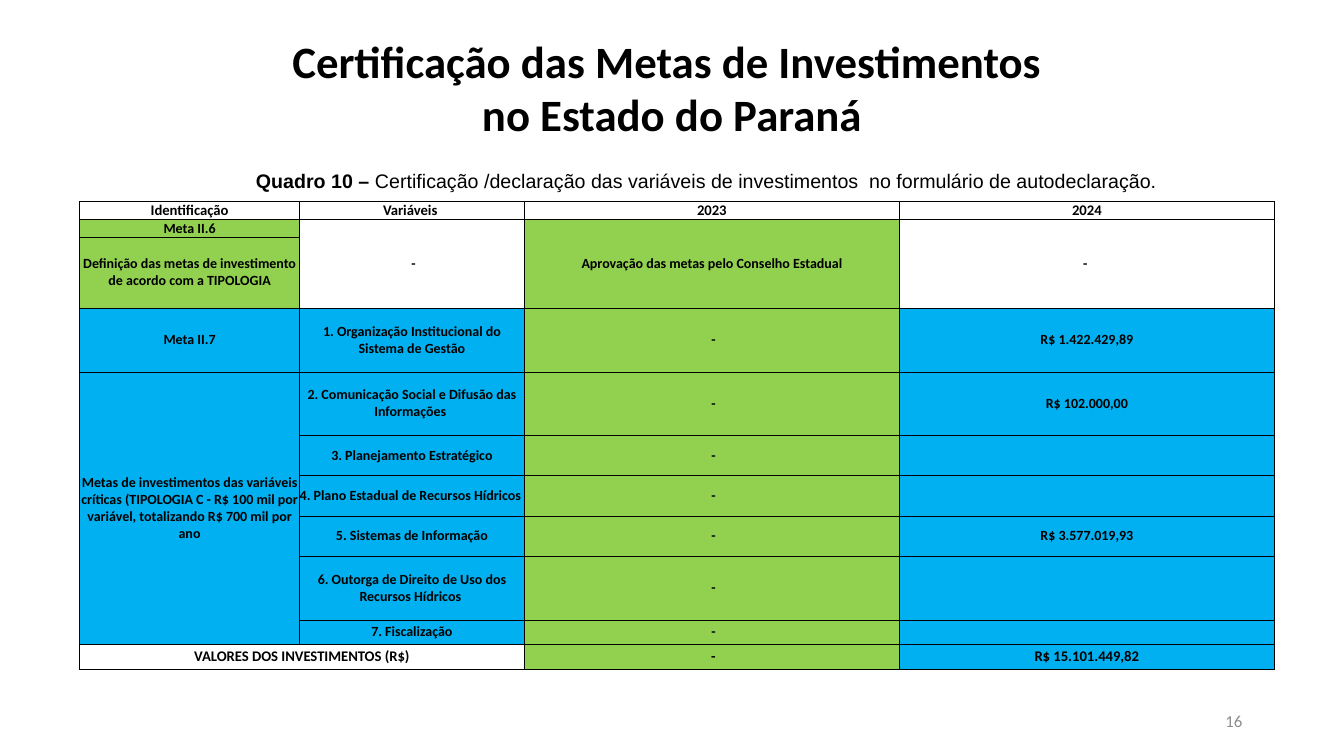
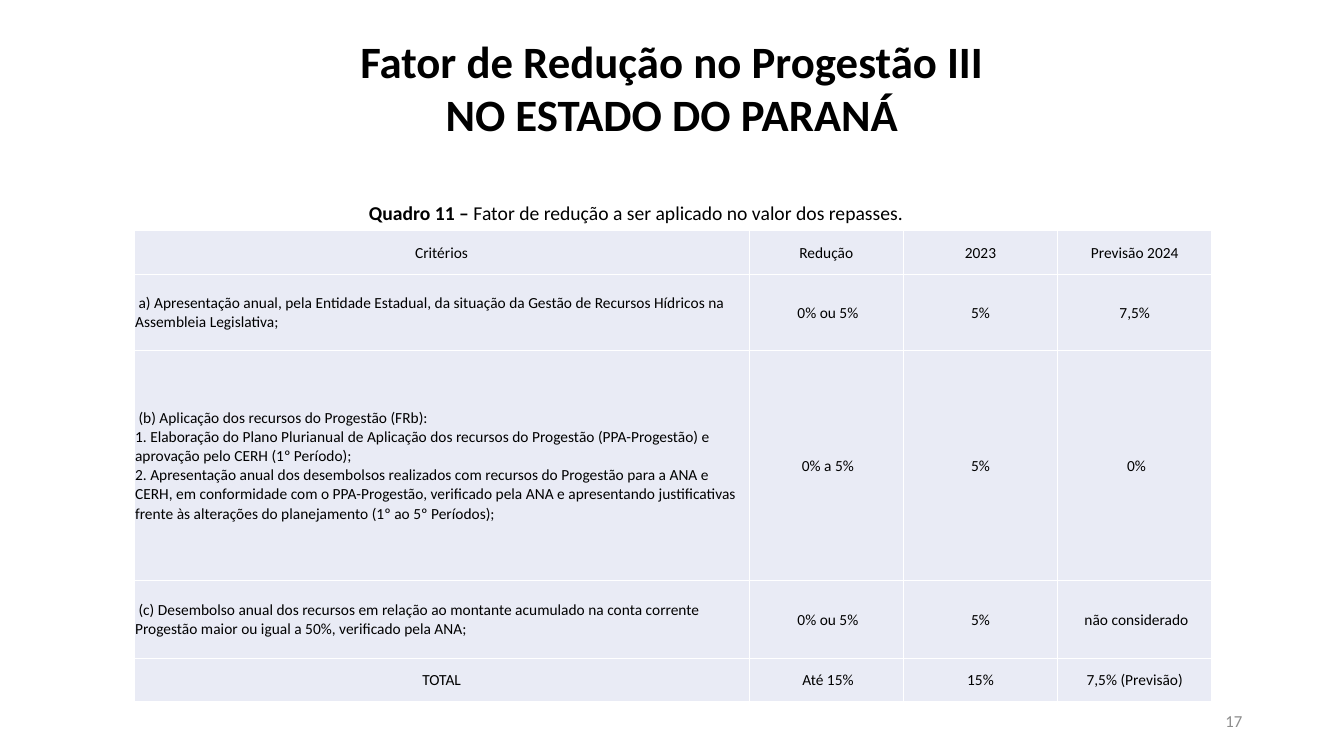
from lxml.etree import SubElement
from pptx import Presentation
from pptx.dml.color import RGBColor
from pptx.enum.text import MSO_ANCHOR as Anchor, MSO_AUTO_SIZE as AutoSize, PP_ALIGN as Align
from pptx.oxml.ns import qn
from pptx.util import Emu, Pt

EMU_PER_PX = 9144
WIDTH, HEIGHT = 1333, 750
TITLE_ONLY = 5
BLACK, WHITE, GRAY = "000000", "FFFFFF", "8C8C8C"
GREEN, BLUE, PALE = "92D050", "00B0F0", "E9EBF5"
SANS, BODY = "Arial", "Calibri"


def px(length):
    return Emu(length * EMU_PER_PX)


def color(value):
    return RGBColor.from_string(value)


class Report:
    """Holds the deck style and the slide being built."""

    def __init__(self):
        self.deck = Presentation()
        self.deck.slide_width, self.deck.slide_height = px(WIDTH), px(HEIGHT)
        self.page = None

    def style(self, para, size, align, font=BODY, ink=BLACK, bold=False):
        para.alignment = align
        for span in para.runs:
            span.font.name, span.font.size, span.font.bold = font, Pt(size), bold
            span.font.color.rgb = color(ink)

    def start(self, title, number):
        self.page = self.deck.slides.add_slide(self.deck.slide_layouts[TITLE_ONLY])
        box = self.page.shapes.title
        box.left, box.top, box.width, box.height = px(0), px(28), px(WIDTH), px(118)
        frame = box.text_frame
        frame.text = title
        frame.auto_size, frame.vertical_anchor = AutoSize.NONE, Anchor.TOP
        for para in frame.paragraphs:
            self.style(para, 32, Align.CENTER, bold=True)
        footer = self.text_box(942, 695, 300, 40)
        footer.vertical_anchor = Anchor.MIDDLE
        footer.text = str(number)
        self.style(footer.paragraphs[0], 12, Align.RIGHT, ink=GRAY)

    def text_box(self, left, top, width, height):
        box = self.page.shapes.add_textbox(px(left), px(top), px(width), px(height))
        box.text_frame.word_wrap = True
        return box.text_frame

    def caption(self, left, top, width, label, wording, font):
        para = self.text_box(left, top, width, 34).paragraphs[0]
        para.text = label
        para.add_run().text = wording
        self.style(para, 14, Align.JUSTIFY, font)
        para.runs[0].font.bold = True

    def table(self, left, top, columns, heights, rows, border, weight):
        holder = self.page.shapes.add_table(
            len(rows), len(columns), px(left), px(top), px(sum(columns)), px(sum(heights)))
        table = holder.table
        table.first_row = table.horz_banding = False
        for column, width in zip(table.columns, columns):
            column.width = px(width)
        for row, height, texts in zip(table.rows, heights, rows):
            row.height = px(height)
            for cell, text in zip(row.cells, texts):
                cell.text = text
                self.outline(cell, border, weight)
        return table

    def outline(self, cell, border, weight):
        properties = cell._tc.get_or_add_tcPr()
        for side in ("lnL", "lnR", "lnT", "lnB"):
            line = SubElement(properties, qn(f"a:{side}"), w=str(Pt(weight)))
            SubElement(SubElement(line, qn("a:solidFill")), qn("a:srgbClr"), val=border)

    def format_cell(self, cell, fill, size, align=Align.CENTER, bold=False, inset=0):
        cell.vertical_anchor = Anchor.MIDDLE
        cell.margin_left = cell.margin_right = cell.margin_top = px(inset)
        cell.margin_bottom = px(0)
        if fill:
            cell.fill.solid()
            cell.fill.fore_color.rgb = color(fill)
        else:
            cell.fill.background()
        for para in cell.text_frame.paragraphs:
            self.style(para, size, align, bold=bold)
            if not para.runs:
                SubElement(para._p, qn("a:endParaRPr"), sz=str(size * 100))


def investment_goals(report):
    report.start("Certificação das Metas de Investimentos \nno Estado do Paraná", 16)
    report.caption(244, 163, 1014, "Quadro 10 –",
                   " Certificação /declaração das variáveis de investimentos  no formulário de autodeclaração.",
                   SANS)
    rows = [
        ("Identificação", "Variáveis ", "2023", "2024"),
        ("Meta II.6", " -", "Aprovação das metas pelo Conselho Estadual", "- "),
        ("Definição das metas de investimento de acordo com a TIPOLOGIA", "", "", ""),
        ("Meta II.7", "1. Organização Institucional do Sistema de Gestão", " -", "R$ 1.422.429,89"),
        ("Metas de investimentos das variáveis críticas (TIPOLOGIA C - R$ 100 mil por variável, "
         "totalizando R$ 700 mil por ano",
         "2. Comunicação Social e Difusão das Informações ", " -", "R$ 102.000,00"),
        ("", "3. Planejamento Estratégico", " -", ""),
        ("", "4. Plano Estadual de Recursos Hídricos ", " -", ""),
        ("", "5. Sistemas de Informação", " -", "R$ 3.577.019,93"),
        ("", "6. Outorga de Direito de Uso dos Recursos Hídricos ", " -", ""),
        ("", "7. Fiscalização", " -", ""),
        ("VALORES DOS INVESTIMENTOS (R$)", "", " -", "R$ 15.101.449,82"),
    ]
    approval = (GREEN, None, GREEN, None)
    variable = (BLUE, BLUE, GREEN, BLUE)
    fills = [(None,) * 4, approval, approval, *[variable] * 7, (None, None, GREEN, BLUE)]
    heights = [18, 17, 71, 63, 63, 40, 40, 40, 63, 24, 25]
    table = report.table(79, 200, [218, 223, 372, 372], heights, rows, BLACK, 0.5)
    last = len(rows) - 1
    for index, row_fills in enumerate(fills):
        size = 10.5 if index in (0, last) else 10
        for cell, fill in zip(table.rows[index].cells, row_fills):
            report.format_cell(cell, fill, size, bold=True)
    for column in (1, 2, 3):
        table.cell(1, column).merge(table.cell(2, column))
    table.cell(4, 0).merge(table.cell(last - 1, 0))
    table.cell(last, 0).merge(table.cell(last, 1))


def reduction_factor(report):
    report.start("Fator de Redução no Progestão III\nNO ESTADO DO PARANÁ", 17)
    report.caption(356, 194, 625, "Quadro 11 –",
                   " Fator de redução a ser aplicado no valor dos repasses.", BODY)
    rows = [
        ("Critérios", "Redução", "2023", "Previsão 2024"),
        (" a) Apresentação anual, pela Entidade Estadual, da situação da Gestão de Recursos Hídricos "
         "na Assembleia Legislativa;", " 0% ou 5%", "5%", "7,5%"),
        (" (b) Aplicação dos recursos do Progestão (FRb):\v"
         "1. Elaboração do Plano Plurianual de Aplicação dos recursos do Progestão (PPA-Progestão) "
         "e aprovação pelo CERH (1º Período);\v"
         "2. Apresentação anual dos desembolsos realizados com recursos do Progestão para a ANA e "
         "CERH, em conformidade com o PPA-Progestão, verificado pela ANA e apresentando "
         "justificativas frente às alterações do planejamento (1º ao 5º Períodos);",
         " 0% a 5%", "5%", " 0%"),
        (" (c) Desembolso anual dos recursos em relação ao montante acumulado na conta corrente "
         "Progestão maior ou igual a 50%, verificado pela ANA;", " 0% ou 5%", "5%", " não considerado"),
        ("TOTAL", " Até 15%", "15%", "7,5% (Previsão)"),
    ]
    table = report.table(133, 229, [610, 153, 153, 153], [43, 76, 228, 77, 43], rows, WHITE, 1)
    for index, row in enumerate(table.rows):
        for column, cell in enumerate(row.cells):
            criterion = column == 0 and 0 < index < len(rows) - 1
            report.format_cell(cell, PALE, 11, Align.LEFT if criterion else Align.CENTER, inset=1)


def main():
    report = Report()
    investment_goals(report)
    reduction_factor(report)
    report.deck.save("out.pptx")


if __name__ == "__main__":
    main()
